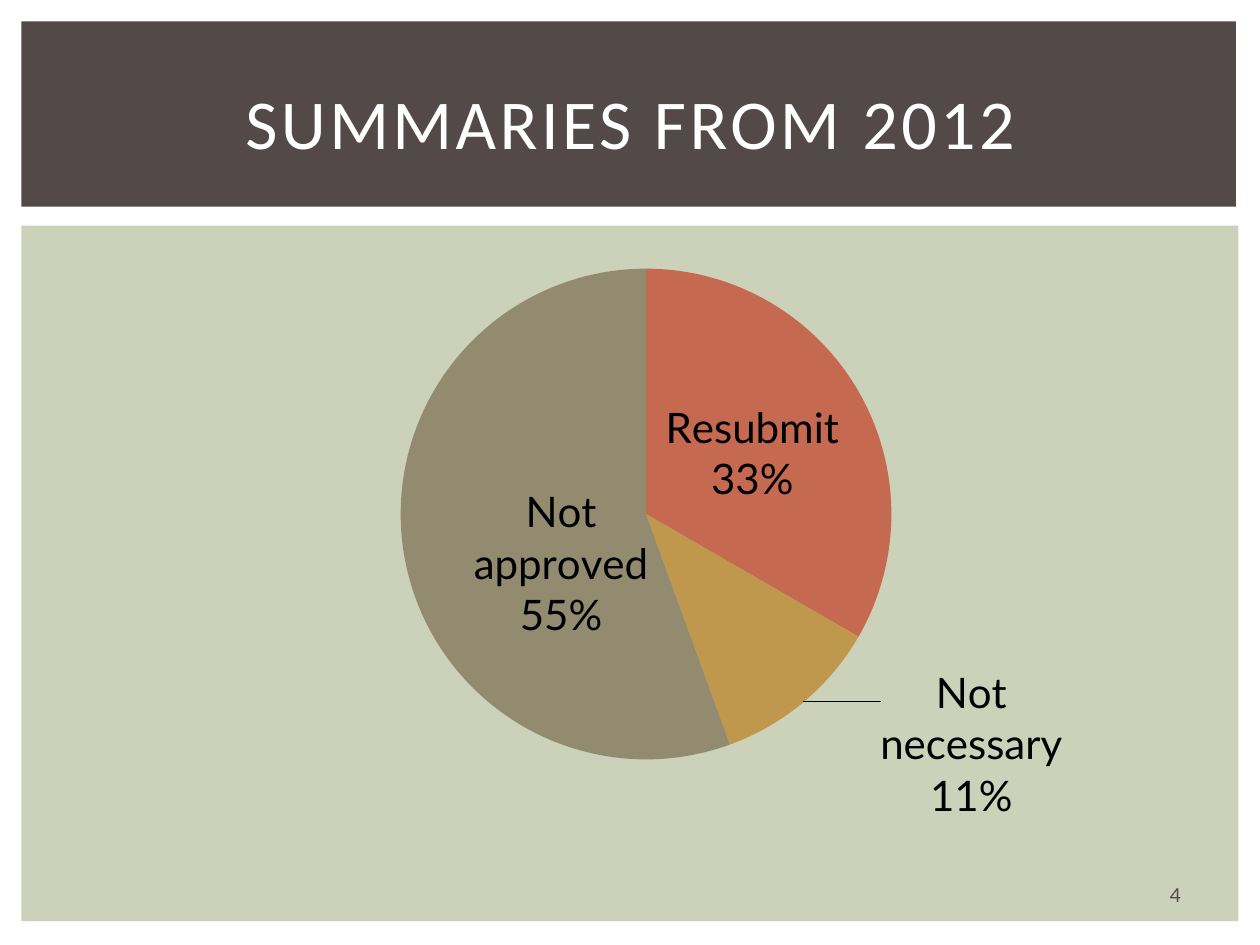
from lxml.etree import SubElement
from pptx import Presentation
from pptx.chart.data import CategoryChartData
from pptx.dml.color import RGBColor
from pptx.enum.chart import XL_CHART_TYPE as ChartType
from pptx.enum.shapes import MSO_SHAPE as Shape
from pptx.enum.text import MSO_ANCHOR as Anchor, PP_ALIGN as Align
from pptx.oxml import parse_xml
from pptx.oxml.ns import nsdecls, qn
from pptx.util import Inches, Pt

WHITE = RGBColor(0xFF, 0xFF, 0xFF)
BLACK = RGBColor(0x00, 0x00, 0x00)
BROWN = RGBColor(0x53, 0x49, 0x49)
SAGE = RGBColor(0xCC, 0xD1, 0xB9)
RED = RGBColor(0xC6, 0x69, 0x51)
GOLD = RGBColor(0xBF, 0x97, 0x4D)
OLIVE = RGBColor(0x92, 0x8B, 0x70)

SLICES = [
    ("Resubmit", 33, RED, "ctr", (0, 0)),
    ("Not necessary", 11, GOLD, "outEnd", (0.06, -0.06)),
    ("Not approved", 55, OLIVE, "ctr", (0.03, 0.04)),
]
PIE_AREA = {"x": 0.3, "y": 0.07, "w": 0.41, "h": 0.72}


class Deck:
    COLS, ROWS = 100, 75
    HEAD_FONT, BODY_FONT = "Calibri", "Lato"

    def __init__(self):
        self.prs = Presentation()
        self.prs.slide_width, self.prs.slide_height = Inches(10), Inches(7.5)
        self.s = self.prs.slides.add_slide(self.prs.slide_layouts[5])

    def box(self, col, row, cols, rows):
        dx = self.prs.slide_width / self.COLS
        dy = self.prs.slide_height / self.ROWS
        return [int(v) for v in (col * dx, row * dy, cols * dx, rows * dy)]

    def style(self, font, name, size, color):
        font.name, font.size, font.color.rgb = name, Pt(size), color

    def panel(self, area, color):
        sp = self.s.shapes.add_shape(Shape.RECTANGLE, *self.box(*area))
        sp.shadow.inherit = False
        sp.fill.solid()
        sp.fill.fore_color.rgb = color
        sp.line.fill.background()

    def fill_text(self, sp, text, name, size, color):
        tf = sp.text_frame
        tf.word_wrap = True
        tf.vertical_anchor = Anchor.MIDDLE
        p = tf.paragraphs[0]
        p.alignment = Align.CENTER
        r = p.add_run()
        r.text = text
        self.style(p.font, name, size, color)
        return r

    def title(self, area, text):
        sp = self.s.shapes.title
        sp.left, sp.top, sp.width, sp.height = self.box(*area)
        r = self.fill_text(sp, text, self.HEAD_FONT, 40, WHITE)
        self.style(r.font, self.HEAD_FONT, 40, WHITE)
        r.font._element.set("spc", "200")
        tree = self.s.shapes._spTree
        tree.remove(sp._element)
        tree.append(sp._element)

    def text(self, area, text, size, color):
        sp = self.s.shapes.add_textbox(*self.box(*area))
        r = self.fill_text(sp, text, self.BODY_FONT, size, color)
        self.style(r.font, self.BODY_FONT, size, color)

    def pie(self, area, slices):
        data = CategoryChartData()
        data.categories = [label for label, *_ in slices]
        data.add_series("Series 1", [value for _, value, *_ in slices])
        frame = self.s.shapes.add_chart(ChartType.PIE, *self.box(*area), data)
        chart = frame.chart
        chart.has_legend = chart.has_title = False
        self.style(chart.font, self.BODY_FONT, 18, BLACK)
        plot = chart.plots[0]
        plot.vary_by_categories = True
        series = plot.series[0]
        labels = series.data_labels
        labels.show_value = labels.show_category_name = True
        self.style(labels.font, self.BODY_FONT, 24, BLACK)
        for i, (_, _, color, place, shift) in enumerate(slices):
            fill = series.points[i].format.fill
            fill.solid()
            fill.fore_color.rgb = color
            labels._element.insert(i, self.pie_label(i, place, shift))
        self.place_pie(chart)

    def pie_label(self, index, place, shift):
        x, y = shift
        return parse_xml(
            f'<c:dLbl {nsdecls("c", "a")}><c:idx val="{index}"/>'
            f'<c:layout><c:manualLayout><c:x val="{x}"/><c:y val="{y}"/>'
            '</c:manualLayout></c:layout>'
            '<c:numFmt formatCode="0&quot;%&quot;" sourceLinked="0"/>'
            '<c:spPr><a:noFill/></c:spPr>'
            '<c:txPr><a:bodyPr/><a:p><a:pPr><a:defRPr sz="2400">'
            f'<a:solidFill><a:srgbClr val="{BLACK}"/></a:solidFill>'
            f'<a:latin typeface="{self.BODY_FONT}"/></a:defRPr></a:pPr></a:p></c:txPr>'
            f'<c:dLblPos val="{place}"/><c:showLegendKey val="0"/>'
            '<c:showVal val="1"/><c:showCatName val="1"/><c:showSerName val="0"/>'
            '<c:showPercent val="0"/><c:showBubbleSize val="0"/>'
            '<c:separator>\n</c:separator></c:dLbl>')

    def place_pie(self, chart):
        plot_area = chart._chartSpace.chart.plotArea
        for old in plot_area.findall(qn("c:layout")):
            plot_area.remove(old)
        layout = parse_xml(f'<c:layout {nsdecls("c")}><c:manualLayout/></c:layout>')
        settings = {"layoutTarget": "inner", "xMode": "edge", "yMode": "edge", **PIE_AREA}
        for tag, value in settings.items():
            SubElement(layout[0], qn(f"c:{tag}")).set("val", str(value))
        plot_area.insert(0, layout)


def main():
    deck = Deck()
    deck.panel((1.7, 17.9, 96.6, 55.2), SAGE)
    deck.panel((1.7, 1.7, 96.4, 14.7), BROWN)
    deck.pie((3.3, 17.5, 95, 54.2), SLICES)
    deck.title((4.2, 3.9, 91.7, 11.5), "SUMMARIES FROM 2012")
    deck.text((90.1, 69.5, 6.4, 3), "4", 11, BROWN)
    deck.prs.save("out.pptx")


if __name__ == "__main__":
    main()
